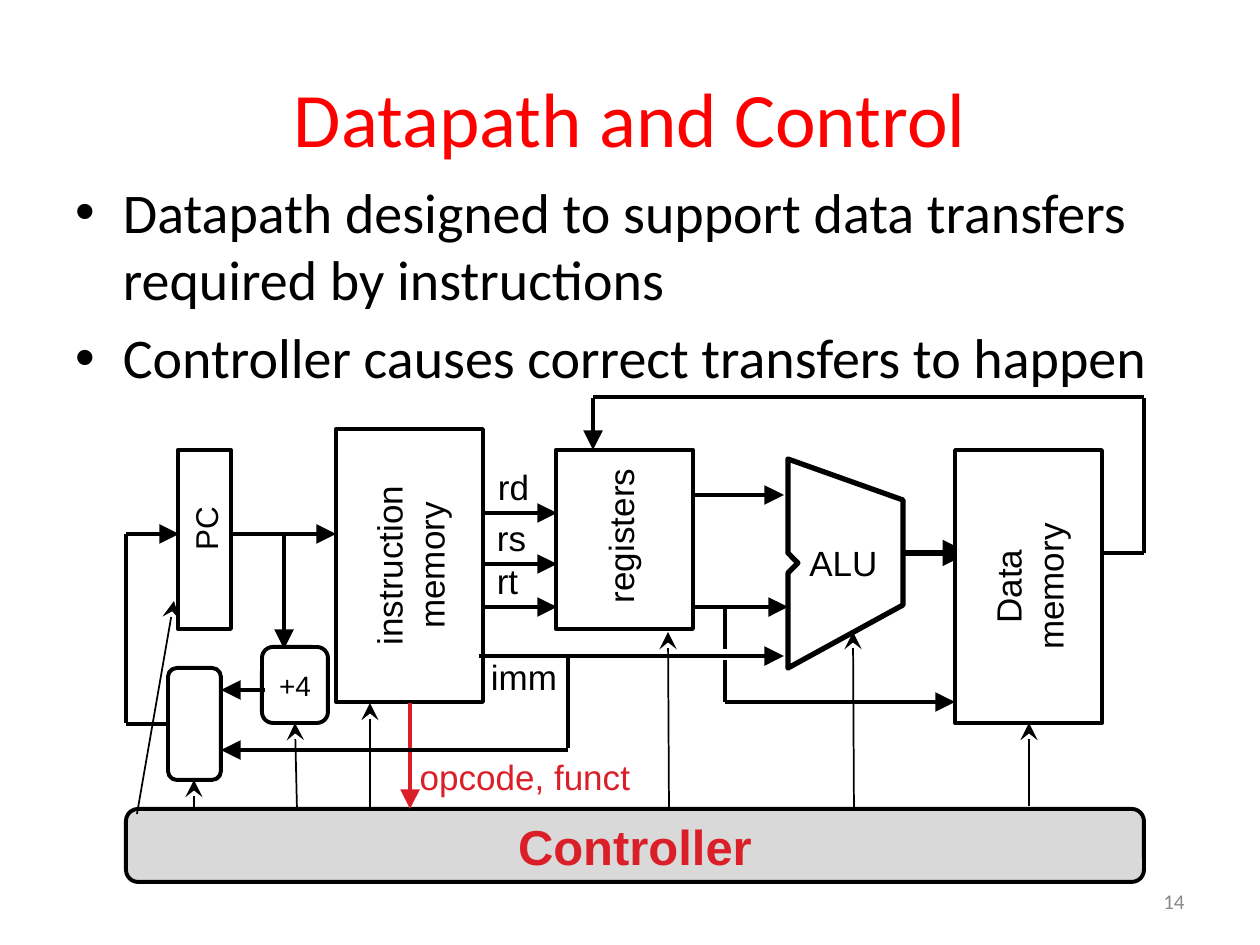
from typing import NamedTuple, Optional

import lxml.etree
import pptx
import pptx.dml.color
import pptx.enum.shapes
import pptx.enum.text
import pptx.oxml.ns
import pptx.util

SCALE = 914400 / 126  # EMU in one px
BLACK = pptx.dml.color.RGBColor(0, 0, 0)
WHITE = pptx.dml.color.RGBColor(255, 255, 255)
RED = pptx.dml.color.RGBColor(255, 0, 0)
CRIMSON = pptx.dml.color.RGBColor(0xDA, 0x1F, 0x28)
SILVER = pptx.dml.color.RGBColor(0xD9, 0xD9, 0xD9)
GRAY = pptx.dml.color.RGBColor(0x89, 0x89, 0x89)

RECT = pptx.enum.shapes.MSO_SHAPE.RECTANGLE
ROUND = pptx.enum.shapes.MSO_SHAPE.ROUNDED_RECTANGLE
LEFT = pptx.enum.text.PP_ALIGN.LEFT
CENTER = pptx.enum.text.PP_ALIGN.CENTER
RIGHT = pptx.enum.text.PP_ALIGN.RIGHT
TOP = pptx.enum.text.MSO_ANCHOR.TOP
MIDDLE = pptx.enum.text.MSO_ANCHOR.MIDDLE


class Box(NamedTuple):
    key: str
    place: tuple
    kind: object = RECT
    text: str = ""
    size: int = 20
    color: object = BLACK
    fill: object = WHITE
    turn: int = 0
    bold: bool = False


class Label(NamedTuple):
    text: str
    place: tuple
    size: int = 20
    color: object = BLACK
    turn: int = 0
    anchor: object = MIDDLE
    align: object = CENTER
    font: str = "Arial"


class Link(NamedTuple):
    start: tuple
    end: tuple
    head: Optional[str] = "triangle"
    width: float = 2.25
    color: object = BLACK
    source: Optional[tuple] = None  # box key and side
    target: Optional[tuple] = None


ALU = [(788, 459), (903, 500), (903, 605), (788, 668),
       (788, 573), (798, 563), (788, 553)]
RESULT = Link((903, 553), (969, 553), width=3)

BOXES = [
    Box("controller", (126, 809, 1018, 73), ROUND, "Controller", 28, CRIMSON,
        SILVER, bold=True),
    Box("pc", (178, 450, 53, 179), fill=None),
    Box("code", (273, 492, 273, 147), text="instruction\nmemory", turn=270),
    Box("adder", (262, 647, 66, 76), ROUND, "+4", 16),
    Box("registers", (556, 450, 137, 179)),
    Box("data", (892, 513, 273, 147), text="Data\nmemory", turn=270),
    Box("mux", (168, 668, 53, 112), ROUND),
]

# Sides of a box turned by 270 degrees turn with it: 1 is its bottom, 2 its right.
DATA = [
    Link((410, 703), (410, 809), color=CRIMSON, source=("code", 1)),
    Link((231, 534), (336, 534)),
    Link((483, 513), (557, 513)),
    Link((483, 564), (557, 564), source=("code", 2)),
    Link((483, 607), (557, 607)),
    Link((693, 607), (788, 607)),
    Link((479, 656), (784, 656)),
    Link((693, 495), (784, 495)),
    Link((725, 607), (725, 649), None),
    Link((725, 660), (725, 702), None),
    Link((725, 702), (955, 702)),
    Link((1103, 553), (1144, 553), None),
    Link((1144, 553), (1144, 398), None),
    Link((1144, 397), (593, 397), None),
    Link((593, 398), (593, 450)),
    Link((284, 534), (284, 649)),
    Link((265, 690), (221, 690)),
    Link((568, 656), (568, 748), None),
    Link((568, 750), (221, 750)),
    Link((168, 724), (126, 724), None, source=("mux", 1)),
    Link((126, 723), (126, 534), None),
    Link((126, 534), (179, 534)),
]

SIGNALS = [
    Link(start, end, "stealth", 1, target=target)
    for start, end, target in [
        ((1029, 806), (1029, 723), ("data", 1)),
        ((854, 811), (853, 632), None),
        ((669, 811), (668, 632), None),
        ((137, 814), (174, 601), None),
        ((297, 810), (295, 723), ("adder", 2)),
        ((370, 810), (370, 703), None),
        ((194, 811), (194, 780), ("mux", 2)),
    ]
]

LABELS = [
    Label("opcode, funct", (394, 744, 262, 66), color=CRIMSON),
    Label("rt", (471, 553, 73, 54)),
    Label("rs", (475, 510, 73, 54)),
    Label("rd", (477, 459, 73, 54)),
    Label("registers", (530, 509, 180, 54), turn=270),
    Label("ALU", (778, 535, 131, 66), anchor=TOP),
    Label("imm", (466, 649, 116, 54)),
    Label("PC", (171, 504, 69, 50), 18, turn=270),
    Label("14", (903, 876, 294, 50), 12, GRAY, align=RIGHT, font="Calibri"),
]


def emu(*px: int) -> list:
    return [pptx.util.Emu(round(n * SCALE)) for n in px]


def style(frame, size: int, color, font: str, align, bold: bool = False) -> None:
    for para in frame.paragraphs:
        para.alignment = align
        for run in para.runs:
            run.font.size = pptx.util.Pt(size)
            run.font.name = font
            run.font.bold = bold
            run.font.color.rgb = color


def outline(shape, width: float, fill) -> None:
    shape.shadow.inherit = False
    shape.line.color.rgb = BLACK
    shape.line.width = pptx.util.Pt(width)
    if fill is None:
        shape.fill.background()
    else:
        shape.fill.solid()
        shape.fill.fore_color.rgb = fill


def draw_box(shapes, box: Box):
    shape = shapes.add_shape(box.kind, *emu(*box.place))
    shape.rotation = box.turn
    outline(shape, 2.25, box.fill)
    if box.text:
        frame = shape.text_frame
        frame.text = box.text
        frame.vertical_anchor = MIDDLE
        style(frame, box.size, box.color, "Arial", CENTER, box.bold)
    return shape


def draw_label(shapes, label: Label) -> None:
    shape = shapes.add_textbox(*emu(*label.place))
    shape.rotation = label.turn
    frame = shape.text_frame
    frame.text = label.text
    frame.word_wrap = not label.turn
    frame.vertical_anchor = label.anchor
    style(frame, label.size, label.color, label.font, label.align)


def draw_link(shapes, link: Link, boxes: dict) -> None:
    """Join the ends to their boxes, then set the ends, as boxes may be turned."""
    ends = emu(*link.start, *link.end)
    line = shapes.add_connector(pptx.enum.shapes.MSO_CONNECTOR.STRAIGHT, *ends)
    if link.source:
        line.begin_connect(boxes[link.source[0]], link.source[1])
    if link.target:
        line.end_connect(boxes[link.target[0]], link.target[1])
    line.begin_x, line.begin_y, line.end_x, line.end_y = ends
    line.line.color.rgb = link.color
    line.line.width = pptx.util.Pt(link.width)
    qn = pptx.oxml.ns.qn
    if link.head:
        stroke = line.line._get_or_add_ln()
        lxml.etree.SubElement(stroke, qn("a:tailEnd"), type=link.head,
                              w="lg", len="lg")
    lxml.etree.SubElement(line._element.spPr, qn("a:effectLst"))


def fill_holder(holder, place: tuple, text: str, size: int, color, align) -> None:
    holder.left, holder.top, holder.width, holder.height = emu(*place)
    frame = holder.text_frame
    frame.text = text
    frame.auto_size = pptx.enum.text.MSO_AUTO_SIZE.NONE
    style(frame, size, color, "Calibri", align)


def main() -> None:
    deck = pptx.Presentation()
    deck.slide_width, deck.slide_height = emu(1260, 945)
    slide = deck.slides.add_slide(deck.slide_layouts[1])
    shapes = slide.shapes
    fill_holder(shapes.title, (63, 38, 1134, 158), "Datapath and Control",
                44, RED, CENTER)
    fill_holder(slide.placeholders[1], (63, 171, 1134, 226),
                "Datapath designed to support data transfers required by instructions\n"
                "Controller causes correct transfers to happen", 32, BLACK, LEFT)

    outer = shapes.build_freeform(*ALU[0], scale=SCALE)
    outer.add_line_segments(ALU[1:], close=True)
    outline(outer.convert_to_shape(), 3, None)
    draw_link(shapes, RESULT, {})

    boxes = {box.key: draw_box(shapes, box) for box in BOXES}
    for link in DATA + SIGNALS:
        draw_link(shapes, link, boxes)
    for label in LABELS:
        draw_label(shapes, label)
    deck.save("out.pptx")


if __name__ == "__main__":
    main()
